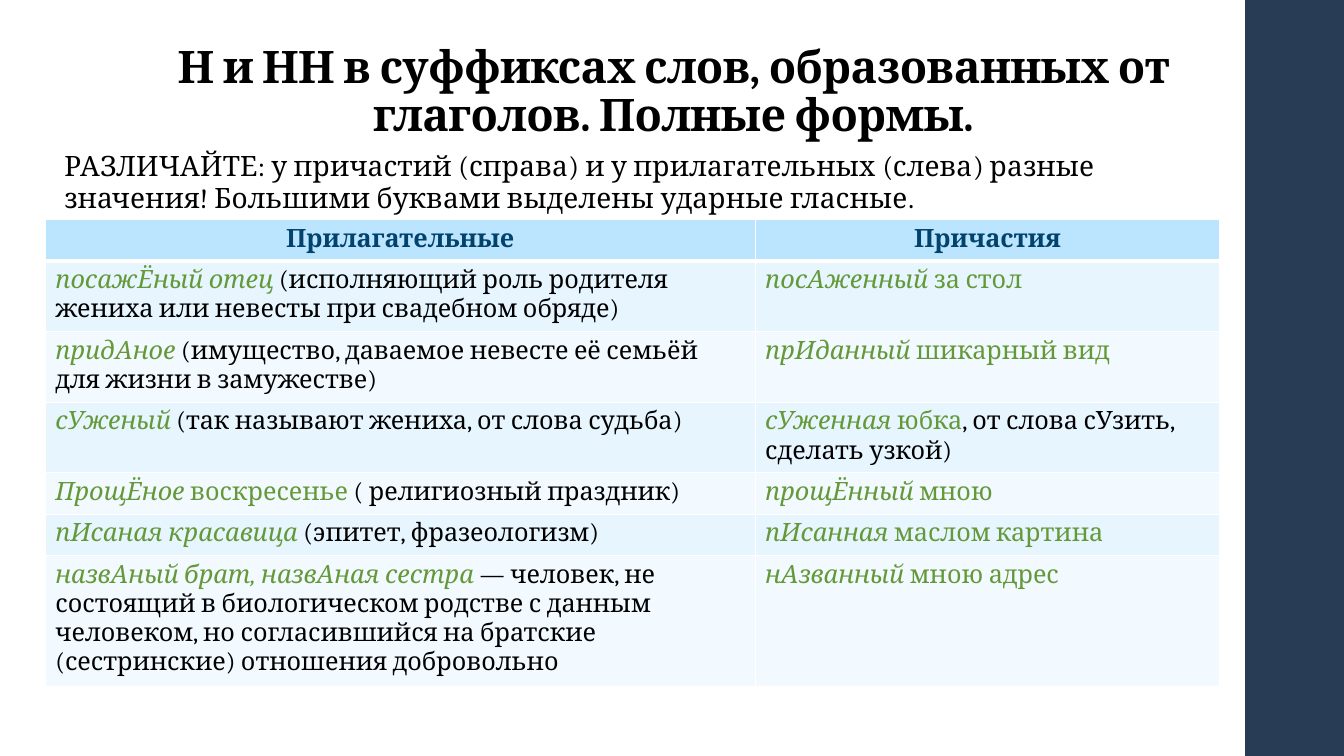
from lxml import etree
from pptx import Presentation
from pptx import util as u
from pptx.dml.color import RGBColor
from pptx.enum import shapes, text
from pptx.oxml.ns import qn

COLORS = {
    "white": "FFFFFF", "black": "000000", "sidebar": "283C55",
    "heading": "02436D", "example": "649939",
    "header": "BBE4FE", "odd": "E7F5FF", "even": "F3FAFF",
}
HEADINGS = ["Прилагательные", "Причастия"]
# Each cell holds its italic example, plain example and explanation.
ROWS = [
    [("посажЁный отец", "", " (исполняющий роль родителя жениха или невесты при свадебном обряде)"),
     ("посАженный", " за стол", "")],
    [("придАное ", "", "(имущество, даваемое невесте её семьёй для жизни в замужестве)"),
     ("прИданный", " шикарный вид", "")],
    [("сУженый ", "", "(так называют жениха, от слова судьба)"),
     ("сУженная", " юбка", ", от слова сУзить, сделать узкой)")],
    [("ПрощЁное", " воскресенье ", "( религиозный праздник)"),
     ("прощЁнный", " мною", "")],
    [("пИсаная красавица", "", " (эпитет, фразеологизм)"),
     ("пИсанная", " маслом картина", "")],
    [("назвАный брат, назвАная сестра", "",
      " — человек, не состоящий в биологическом родстве с данным человеком, "
      "но согласившийся на братские (сестринские) отношения добровольно"),
     ("нАзванный", " мною адрес", "")],
]


class SlideBuilder:
    """Holds the style and the current slide."""

    font = "Cambria"

    def __init__(self, page):
        self.page = page

    def color(self, name):
        return RGBColor.from_string(COLORS[name])

    def style(self, span, size, color, bold=False, italic=False, spacing=0):
        font = span.font
        font.name, font.size = self.font, u.Pt(size)
        font.bold, font.italic = bold, italic
        font.color.rgb = self.color(color)
        if spacing:
            span._r.get_or_add_rPr().set("spc", str(round(spacing * 100)))

    def bar(self, left, top, width, height, color):
        box = self.page.shapes.add_shape(
            shapes.MSO_SHAPE.RECTANGLE, *map(u.Inches, (left, top, width, height)))
        box.shadow.inherit = False
        box.fill.solid()
        box.fill.fore_color.rgb = self.color(color)
        box.line.fill.background()

    def text(self, words, left, top, width, height, line_spacing,
             align=text.PP_ALIGN.LEFT, anchor=text.MSO_ANCHOR.TOP, **style):
        box = self.page.shapes.add_textbox(*map(u.Inches, (left, top, width, height)))
        frame = box.text_frame
        frame.word_wrap = True
        frame.vertical_anchor = anchor
        frame.text = words
        para = frame.paragraphs[0]
        para.alignment, para.line_spacing = align, line_spacing
        self.style(para.runs[0], color="black", **style)

    def paint(self, cell, fill, bottom=1):
        properties = cell._tc.get_or_add_tcPr()
        for side, points in (("L", 1), ("R", 1), ("T", 1), ("B", bottom)):
            line = etree.SubElement(properties, qn(f"a:ln{side}"), w=str(u.Pt(points)))
            solid = etree.SubElement(line, qn("a:solidFill"))
            etree.SubElement(solid, qn("a:srgbClr"), val=COLORS["white"])
        cell.fill.solid()
        cell.fill.fore_color.rgb = self.color(fill)

    def table(self, left, top, widths, row_height):
        count = len(ROWS) + 1
        table = self.page.shapes.add_table(
            count, len(widths), u.Inches(left), u.Inches(top),
            u.Inches(sum(widths)), u.Inches(row_height * count)).table
        for column, width in zip(table.columns, widths):
            column.width = u.Inches(width)
        for row in table.rows:
            row.height = u.Inches(row_height)
        for index, heading in enumerate(HEADINGS):
            cell = table.cell(0, index)
            cell.text_frame.text = heading
            para = cell.text_frame.paragraphs[0]
            para.alignment = text.PP_ALIGN.CENTER
            self.style(para.runs[0], 18, "heading", bold=True)
            self.paint(cell, "header", bottom=3)
        for number, entries in enumerate(ROWS, 1):
            for index, parts in enumerate(entries):
                cell = table.cell(number, index)
                para = cell.text_frame.paragraphs[0]
                looks = (("example", True), ("example", False), ("black", False))
                for words, (color, italic) in zip(parts, looks):
                    if words:
                        span = para.add_run()
                        span.text = words
                        self.style(span, 18, color, italic=italic)
                self.paint(cell, "odd" if number % 2 else "even")


def main():
    deck = Presentation()
    deck.slide_width, deck.slide_height = u.Inches(13.33), u.Inches(7.5)
    slide = SlideBuilder(deck.slides.add_slide(deck.slide_layouts[6]))
    slide.bar(12.35, 0, 0.98, 7.5, "sidebar")
    slide.text("Н и НН в суффиксах слов, образованных от глаголов. Полные формы.",
               1.38, 0.4, 10.6, 1.05, 0.9, text.PP_ALIGN.CENTER,
               text.MSO_ANCHOR.BOTTOM, size=32, bold=True, spacing=-0.5)
    slide.text("РАЗЛИЧАЙТЕ: у причастий (справа) и у прилагательных (слева) разные "
               "значения! Большими буквами выделены ударные гласные.",
               0.54, 1.45, 11.73, 5.35, 0.95, size=20, spacing=0.1)
    slide.table(0.45, 2.18, (7.04, 4.61), 0.41)
    deck.save("out.pptx")


if __name__ == "__main__":
    main()
